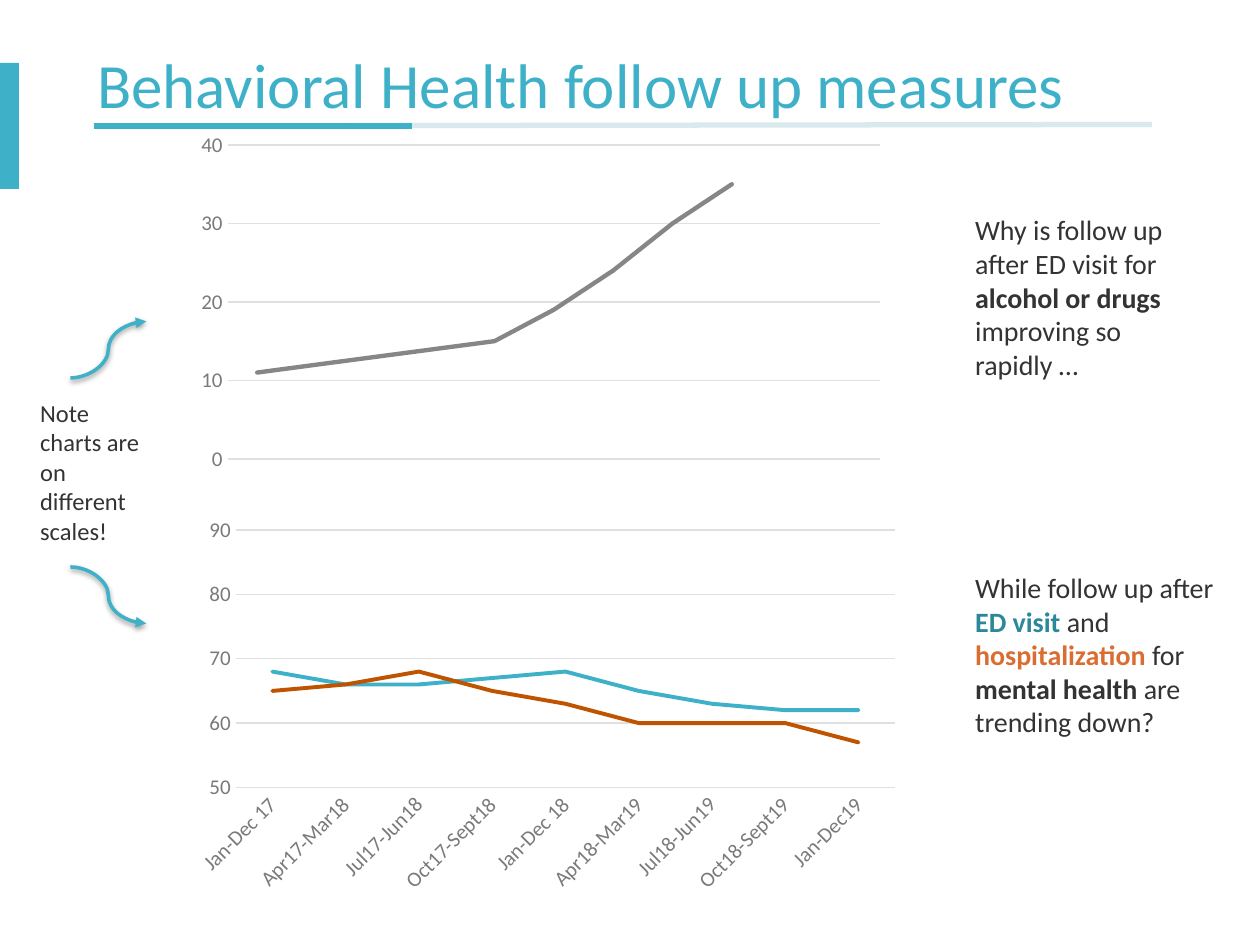
from lxml.etree import SubElement
from pptx import Presentation
from pptx.chart.data import CategoryChartData
from pptx.dml.color import RGBColor
from pptx.enum.chart import XL_CHART_TYPE, XL_TICK_MARK
from pptx.enum.shapes import MSO_CONNECTOR, MSO_SHAPE
from pptx.enum.text import MSO_ANCHOR, MSO_AUTO_SIZE, PP_ALIGN
from pptx.oxml import parse_xml
from pptx.oxml.ns import nsdecls, qn
from pptx.util import Cm, Pt

TEAL, ORANGE, GRAY = "3EB1C8", "BF5300", "868685"
TEXT, LABEL, GRID = "333333", "7A7A7A", "E0E0E0"


def color(hex_string):
    return RGBColor.from_string(hex_string)


def set_font(font, size, hex_string):
    font.name = "Calibri"
    font.size = Pt(size)
    font.color.rgb = color(hex_string)


presentation = Presentation()
presentation.slide_width, presentation.slide_height = Cm(25.4), Cm(19.05)
slide = presentation.slides.add_slide(presentation.slide_layouts[5])

# Title
title = slide.shapes.title
title.left, title.top, title.width, title.height = Cm(1.96), Cm(1.14), Cm(20.62), Cm(1.35)
frame = title.text_frame
frame.text = "Behavioral Health follow up measures"
frame.margin_left = frame.margin_right = frame.margin_top = frame.margin_bottom = 0
frame.vertical_anchor = MSO_ANCHOR.MIDDLE
frame.auto_size = MSO_AUTO_SIZE.NONE
paragraph = frame.paragraphs[0]
paragraph.alignment = PP_ALIGN.LEFT
paragraph.line_spacing = 0.8
set_font(paragraph.font, 36, TEAL)

# Accent bar at the left edge
bar = slide.shapes.add_shape(MSO_SHAPE.RECTANGLE, 0, Cm(1.27), Cm(0.38), Cm(2.54))
bar.shadow.inherit = False
bar.fill.solid()
bar.fill.fore_color.rgb = color(TEAL)
bar.line.fill.background()

# Title rules: a pale full-width line under a short strong one
for end_x, end_y, line_color, opacity in [(23.22, 2.51, "81BAC6", 30), (8.31, 2.54, TEAL, 100)]:
    rule = slide.shapes.add_connector(MSO_CONNECTOR.STRAIGHT, Cm(1.9), Cm(2.54), Cm(end_x), Cm(end_y))
    rule.line.width = Pt(3)
    rule.line.color.rgb = color(line_color)
    SubElement(rule.element.spPr, qn("a:effectLst"))
    if opacity < 100:
        fill = rule.element.spPr.find(".//" + qn("a:srgbClr"))
        SubElement(fill, qn("a:alpha"), val=str(opacity * 1000))

# Comments: runs are (text, bold, colour)
comments = [
    ((19.41, 4.17, 4.98, 3.68), 16, [
        ("Why is follow up after ED visit for ", False, TEXT),
        ("alcohol or drugs ", True, TEXT),
        ("improving so rapidly …", False, TEXT)]),
    ((0.56, 7.9, 2.74, 3.25), 14, [("Note charts are on different scales!", False, TEXT)]),
    ((19.41, 11.38, 5.44, 3.68), 16, [
        ("While follow up after ", False, TEXT),
        ("ED visit ", True, "2C8799"),
        ("and ", False, TEXT),
        ("hospitalization", True, "DA6D32"),
        (" for ", False, TEXT),
        ("mental health ", True, TEXT),
        ("are trending down?", False, TEXT)]),
]
for box, size, runs in comments:
    frame = slide.shapes.add_textbox(*map(Cm, box)).text_frame
    frame.word_wrap = True
    paragraph = frame.paragraphs[0]
    set_font(paragraph.font, size, TEXT)
    for text, bold, run_color in runs:
        run = paragraph.add_run()
        run.text = text
        if bold:
            run.font.bold = True
        if run_color != TEXT:
            run.font.color.rgb = color(run_color)

# Curved arrows from the note to each chart
for start_y, end_y in [(7.62, 6.48), (11.43, 12.57)]:
    arrow = slide.shapes.add_connector(MSO_CONNECTOR.CURVE, Cm(1.42), Cm(start_y), Cm(2.95), Cm(end_y))
    arrow.line.width = Pt(2)
    arrow.line.color.rgb = color(TEAL)
    properties = arrow.element.spPr
    SubElement(properties.find(qn("a:ln")), qn("a:tailEnd"), type="triangle")
    properties.append(parse_xml(
        f'<a:effectLst {nsdecls("a")}><a:outerShdw blurRad="{Pt(3.1)}" dist="{Pt(1.6)}" dir="5400000" '
        'rotWithShape="0"><a:srgbClr val="000000"><a:alpha val="38000"/></a:srgbClr>'
        '</a:outerShdw></a:effectLst>'))

# Charts: box, plot area as fractions, scale, categories, series, line width
quarters = ["Jan-Dec 17", "Apr17-Mar18", "Jul17-Jun18", "Oct17-Sept18", "Jan-Dec 18",
            "Apr18-Mar19", "Jul18-Jun19", "Oct18-Sept19", "Jan-Dec19"]
charts = [
    ((3.73, 2.57, 14.3, 7.11), (0.06, 0.05, 0.92, 0.89), (0, 40),
     [str(number) for number in range(1, 12)],
     [(GRAY, [11, 12, 13, 14, 15, 19, 24, 30, 35, None, None])], 2.5),
    ((3.73, 10.29, 14.61, 7.87), (0.07, 0.05, 0.91, 0.66), (50, 90), quarters,
     [(TEAL, [68, 66, 66, 67, 68, 65, 63, 62, 62]),
      (ORANGE, [65, 66, 68, 65, 63, 60, 60, 60, 57])], 2.25),
]
for box, plot_area, scale, categories, series_list, line_width in charts:
    data = CategoryChartData()
    data.categories = categories
    for number, (line_color, values) in enumerate(series_list, 1):
        data.add_series(f"Series {number}", values)
    chart = slide.shapes.add_chart(XL_CHART_TYPE.LINE, *map(Cm, box), data).chart
    chart.has_legend = chart.has_title = False
    set_font(chart.font, 10, TEXT)
    chart.plots[0].vary_by_categories = False

    for series, (line_color, values) in zip(chart.plots[0].series, series_list):
        series.smooth = False
        series.format.line.width = Pt(line_width)
        series.format.line.color.rgb = color(line_color)
        series.format.line._get_or_add_ln().set("cap", "rnd")

    for axis in (chart.category_axis, chart.value_axis):
        axis.major_tick_mark = axis.minor_tick_mark = XL_TICK_MARK.NONE
        set_font(axis.tick_labels.font, 12, LABEL)
    value_axis = chart.value_axis
    value_axis.minimum_scale, value_axis.maximum_scale = scale
    value_axis.major_unit = 10
    value_axis.format.line.fill.background()
    gridline = value_axis.major_gridlines.format.line
    gridline.width = Pt(0.75)
    gridline.color.rgb = color(GRID)

    category_axis = chart.category_axis
    category_axis.format.line.width = Pt(0.75)
    category_axis.format.line.color.rgb = color(GRID)
    category_axis.visible = categories is quarters
    chart_xml = chart.element
    chart_xml.find(".//" + qn("c:catAx")).find(".//" + qn("a:bodyPr")).set("rot", "-2700000")

    # Fixed inner plot area
    plot_xml = chart_xml.find(".//" + qn("c:plotArea"))
    for layout in plot_xml.findall(qn("c:layout")):
        plot_xml.remove(layout)
    positions = "".join(f'<c:{tag} val="{value}"/>' for tag, value in zip("xywh", plot_area))
    plot_xml.insert(0, parse_xml(
        f'<c:layout {nsdecls("c")}><c:manualLayout><c:layoutTarget val="inner"/>'
        f'<c:xMode val="edge"/><c:yMode val="edge"/>{positions}</c:manualLayout></c:layout>'))

presentation.save("out.pptx")
